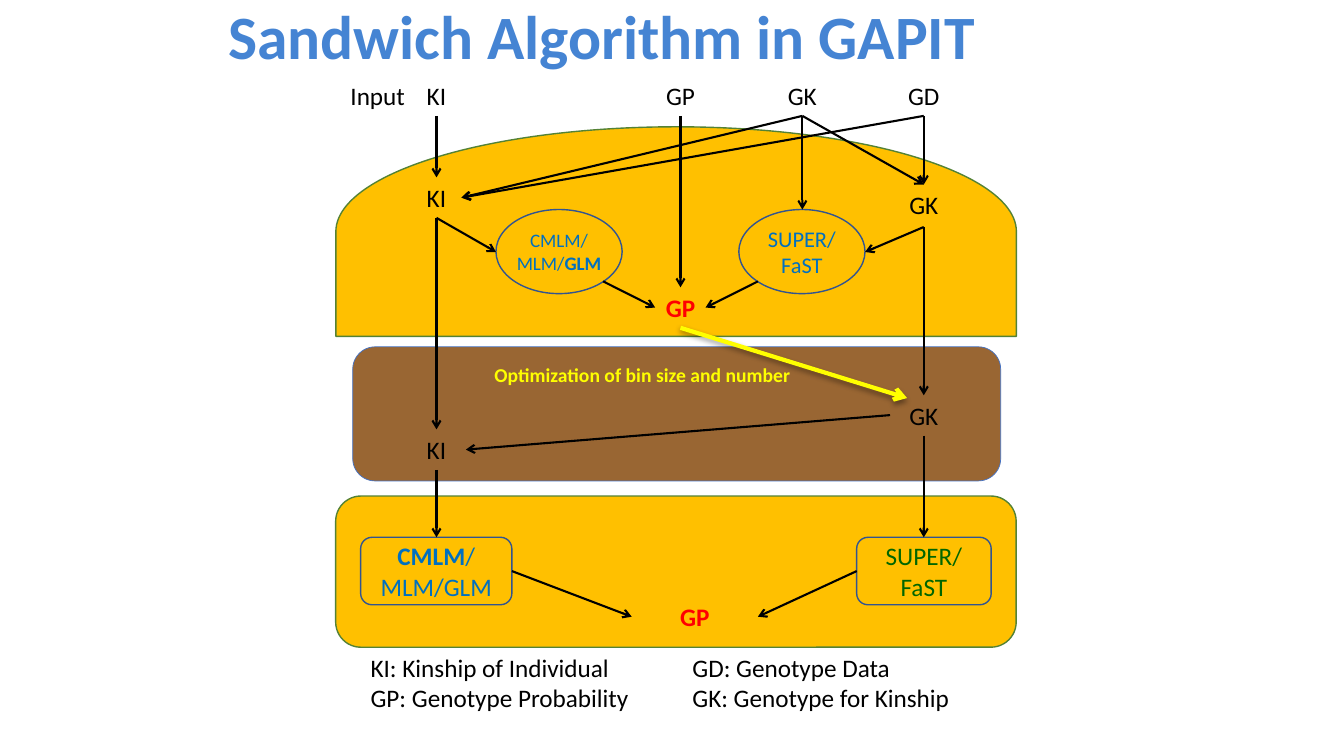
from dataclasses import dataclass

from lxml.etree import SubElement
from pptx import Presentation
from pptx.dml.color import RGBColor
from pptx.enum.shapes import MSO_CONNECTOR as Connector, MSO_SHAPE as Preset
from pptx.enum.text import MSO_ANCHOR as Anchor, PP_ALIGN as Align
from pptx.oxml.ns import qn
from pptx.util import Cm, Pt


@dataclass(frozen=True)
class Theme:
    font: str = "Calibri"
    title: str = "4584D3"
    text: str = "000000"
    result: str = "FF0000"
    highlight: str = "FFFF00"
    bread: str = "FFC000"
    crust: str = "548235"
    filling: str = "996633"
    filling_edge: str = "4472C4"
    method_edge: str = "325491"
    method: str = "0070C0"
    fast_method: str = "006600"
    title_size: float = 44
    body_size: float = 18
    oval_size: float = 16
    small_oval_size: float = 13.6
    note_size: float = 14


THEME = Theme()

# Centres of the columns, in cm
INPUT, KI, GP, GK, GD = 9.52, 11.0, 17.15, 20.22, 23.28
LABEL_HEIGHT = 1.02

# Tops of the label rows, in cm
INPUT_ROW, TOP_KI, TOP_GK, TOP_GP = 1.9, 4.47, 4.65, 7.24
MID_GK, MID_KI, METHOD_ROW, LAST_GP = 9.96, 10.82, 13.54, 15.04
LAST_GP_X = 17.51


def rgb(colour):
    return RGBColor.from_string(colour)


def write(text_frame, lines, size, colour, bold=False, align=Align.CENTER):
    """Write lines; a line is a string or a list of (text, bold) runs."""
    text_frame.word_wrap = True
    for index, line in enumerate(lines):
        paragraph = text_frame.paragraphs[0] if index == 0 else text_frame.add_paragraph()
        paragraph.alignment = align
        for text, is_bold in [(line, bold)] if isinstance(line, str) else line:
            run = paragraph.add_run()
            run.text = text
            run.font.name = THEME.font
            run.font.size = Pt(size)
            run.font.bold = is_bold
            run.font.color.rgb = rgb(colour)


def set_title(slide, text):
    title = slide.shapes.title
    title.left, title.top, title.width, title.height = Cm(5.5), Cm(0), Cm(22.86), Cm(1.98)
    title.text_frame.vertical_anchor = Anchor.MIDDLE
    write(title.text_frame, [text], THEME.title_size, THEME.title, True, Align.LEFT)
    title.text_frame.paragraphs[0].line_spacing = 0.9


def add_panel(slide, preset, box, edge, fill=None, edge_width=1.0):
    shape = slide.shapes.add_shape(preset, *map(Cm, box))
    shape.shadow.inherit = False
    if fill:
        shape.fill.solid()
        shape.fill.fore_color.rgb = rgb(fill)
    else:
        shape.fill.background()
    shape.line.color.rgb = rgb(edge)
    shape.line.width = Pt(edge_width)
    return shape


def add_method(slide, preset, box, lines, size, colour):
    shape = add_panel(slide, preset, box, THEME.method_edge)
    text_frame = shape.text_frame
    text_frame.vertical_anchor = Anchor.MIDDLE
    if preset == Preset.OVAL:
        text_frame.margin_left = text_frame.margin_right = 0
        text_frame.margin_top = text_frame.margin_bottom = 0
    write(text_frame, lines, size, colour)


def add_label(slide, text, centre, top, width=1.7, size=THEME.body_size,
              colour=THEME.text, bold=False):
    box = slide.shapes.add_textbox(Cm(centre - width / 2), Cm(top), Cm(width), Cm(LABEL_HEIGHT))
    write(box.text_frame, [text], size, colour, bold)


def add_legend(slide, left, lines):
    box = slide.shapes.add_textbox(Cm(left), Cm(16.31), Cm(9.32), Cm(1.9))
    write(box.text_frame, lines, THEME.body_size, THEME.text, align=Align.LEFT)
    for paragraph in box.text_frame.paragraphs:
        properties = paragraph._p.get_or_add_pPr()
        properties.set("marL", str(Cm(0.95)))
        properties.set("indent", str(-Cm(0.95)))


def add_arrow(slide, start, end, colour=THEME.text, width=1.5, shadow=False):
    arrow = slide.shapes.add_connector(Connector.STRAIGHT, *map(Cm, (*start, *end)))
    arrow.line.color.rgb = rgb(colour)
    arrow.line.width = Pt(width)
    SubElement(arrow.line._get_or_add_ln(), qn("a:tailEnd"), type="arrow")
    effects = SubElement(arrow._element.spPr, qn("a:effectLst"))
    if shadow:
        outer = SubElement(effects, qn("a:outerShdw"), blurRad=str(Pt(4)), dist=str(Pt(2)),
                           dir="5400000", rotWithShape="0")
        black = SubElement(outer, qn("a:srgbClr"), val="000000")
        SubElement(black, qn("a:alpha"), val="38000")


def add_sandwich(slide):
    add_panel(slide, Preset.ROUNDED_RECTANGLE, (8.89, 8.74, 16.33, 3.38),
              THEME.filling_edge, THEME.filling, 0.5)
    top_bread = add_panel(slide, Preset.FLOWCHART_DELAY, (14.4, -2.74, 5.28, 17.15),
                          THEME.crust, THEME.bread)
    top_bread.rotation = 270
    add_panel(slide, Preset.ROUNDED_RECTANGLE, (8.46, 12.5, 17.15, 3.81),
              THEME.crust, THEME.bread)


def add_labels(slide):
    add_label(slide, "Input", INPUT, INPUT_ROW, 2.12)
    for text, centre, top in [
        ("KI", KI, INPUT_ROW), ("GP", GP, INPUT_ROW),
        ("GK", GK, INPUT_ROW), ("GD", GD, INPUT_ROW),
        ("KI", KI, TOP_KI), ("GK", GD, TOP_GK),
        ("GK", GD, MID_GK), ("KI", KI, MID_KI),
    ]:
        add_label(slide, text, centre, top)
    for centre, top in [(GP, TOP_GP), (LAST_GP_X, LAST_GP)]:
        add_label(slide, "GP", centre, top, colour=THEME.result, bold=True)
    add_label(slide, "Optimization of bin size and number", 16.19, 9.02, 8.66,
              THEME.note_size, THEME.highlight, True)


def add_methods(slide):
    add_method(slide, Preset.OVAL, (12.5, 5.28, 3.18, 2.12),
               ["CMLM/", [("MLM/", False), ("GLM", True)]],
               THEME.small_oval_size, THEME.method)
    add_method(slide, Preset.OVAL, (18.62, 5.28, 3.18, 2.12), ["SUPER/", "FaST"],
               THEME.oval_size, THEME.method)
    add_method(slide, Preset.ROUNDED_RECTANGLE, (9.09, METHOD_ROW, 3.81, 1.7),
               [[("CMLM", True), ("/", False)], "MLM/GLM"],
               THEME.body_size, THEME.method)
    add_method(slide, Preset.ROUNDED_RECTANGLE, (21.59, METHOD_ROW, 3.39, 1.7),
               ["SUPER/", "FaST"], THEME.body_size, THEME.fast_method)


def add_arrows(slide):
    input_end = INPUT_ROW + LABEL_HEIGHT
    ki_end, gk_end = TOP_KI + LABEL_HEIGHT, TOP_GK + 1.07
    ki_side = (11.63, 4.98)
    for column, start, end in [
        (KI, input_end, TOP_KI), (GP, input_end, TOP_GP),
        (GK, input_end, 5.28), (GD, input_end, TOP_GK),
        (KI, ki_end, MID_KI), (GD, gk_end, MID_GK),
        (KI, MID_KI + LABEL_HEIGHT, METHOD_ROW), (GD, MID_GK + LABEL_HEIGHT, METHOD_ROW),
    ]:
        add_arrow(slide, (column, start), (column, end))
    for start, end in [
        ((GK, input_end), ki_side), ((GD, input_end), ki_side),
        ((GK, input_end), (GD, TOP_GK)),
        ((KI, ki_end), (12.5, 6.35)), ((GD, gk_end), (21.8, 6.35)),
        ((15.2, 7.09), (16.51, 7.75)), ((19.1, 7.09), (17.78, 7.75)),
        ((22.43, 10.46), (11.74, 11.33)),
        ((12.9, 14.39), (15.92, 15.54)), ((21.59, 14.39), (19.1, 15.54)),
    ]:
        add_arrow(slide, start, end)
    add_arrow(slide, (GP, TOP_GP + LABEL_HEIGHT), (22.86, 10.03),
              THEME.highlight, 3, shadow=True)


def main():
    presentation = Presentation()
    presentation.slide_width, presentation.slide_height = Cm(33.87), Cm(19.05)
    slide = presentation.slides.add_slide(presentation.slide_layouts[5])
    set_title(slide, "Sandwich Algorithm in GAPIT")
    add_sandwich(slide)
    add_labels(slide)
    add_methods(slide)
    add_arrows(slide)
    add_legend(slide, 9.09, ["KI: Kinship of Individual", "GP: Genotype Probability"])
    add_legend(slide, 17.2, ["GD: Genotype Data", "GK: Genotype for Kinship"])
    presentation.save("out.pptx")


if __name__ == "__main__":
    main()
